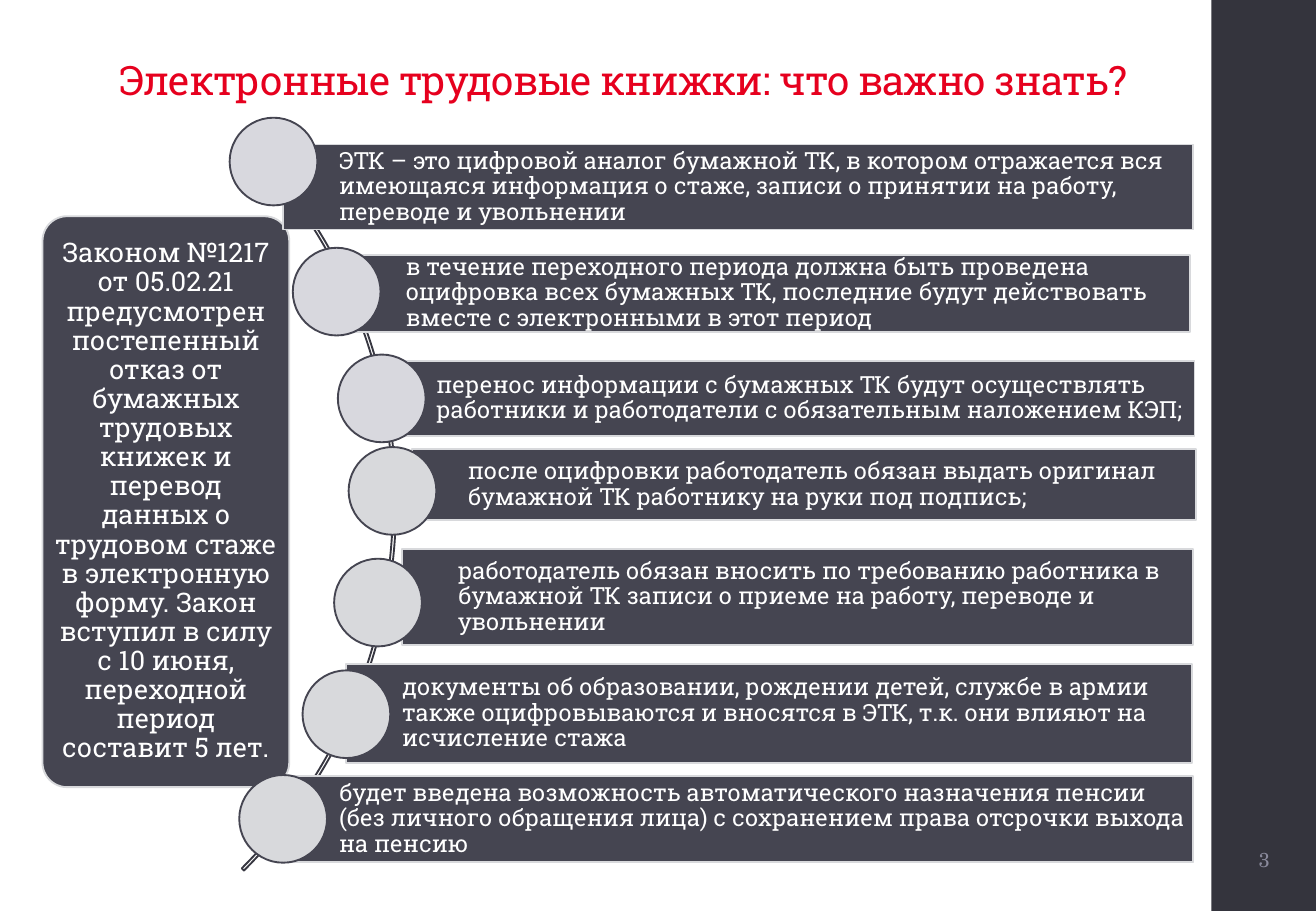
from typing import NamedTuple

from pptx import Presentation
from pptx.dml.color import RGBColor
from pptx.enum.shapes import MSO_SHAPE as Shape
from pptx.enum.text import MSO_ANCHOR as Anchor, PP_ALIGN as Align
from pptx.util import Pt

SLAB = "Roboto Slab"
DARK = "454551"
OUTLINE = "D8D9DC"
LILAC = "D8D8DE"
DOT_SIZE = 52


class Fact(NamedTuple):
    """One bar of the list, with the place and colour of its dot, in points."""
    bar: tuple
    dot: tuple
    dot_color: str
    text: str


FACTS = [
    Fact((167.8, 85.7, 539.3, 50.4), (136.1, 69.8), LILAC,
         "ЭТК – это цифровой аналог бумажной ТК, в котором отражается вся "
         "имеющаяся информация о стаже, записи о принятии на работу, "
         "переводе и увольнении"),
    Fact((207.4, 151.2, 497.5, 45.4), (173.5, 146.9), LILAC,
         "в течение переходного периода должна быть проведена оцифровка всех "
         "бумажных ТК, последние будут действовать вместе с электронными в "
         "этот период"),
    Fact((225.4, 213.8, 482.4, 44.6), (200.2, 210.2), LILAC,
         "перенос информации с бумажных ТК будут осуществлять работники и "
         "работодатели с обязательным наложением КЭП;"),
    Fact((244.1, 266.4, 464.4, 41.8), (206.6, 265), OUTLINE,
         "после оцифровки работодатель обязан выдать оригинал бумажной ТК "
         "работнику на руки под подпись;"),
    Fact((238.3, 325.4, 468.7, 56.9), (198, 331.2), OUTLINE,
         "работодатель обязан вносить по требованию работника в бумажной ТК "
         "записи о приеме на работу, переводе и увольнении"),
    Fact((205.2, 393.8, 501.1, 58.3), (179.3, 397.4), OUTLINE,
         "документы об образовании, рождении детей, службе в армии также "
         "оцифровываются и вносятся в ЭТК, т.к. они влияют на исчисление "
         "стажа"),
    Fact((167.8, 460.1, 539.3, 51.1), (141.8, 459.4), OUTLINE,
         "будет введена возможность автоматического назначения пенсии (без "
         "личного обращения лица) с сохранением права отсрочки выхода на "
         "пенсию"),
]

LAW = ("Законом №1217 от 05.02.21 предусмотрен постепенный отказ от бумажных "
       "трудовых книжек и перевод данных о трудовом стаже в электронную "
       "форму. Закон вступил в силу с 10 июня, переходной период составит "
       "5 лет.")


def rgb(color):
    return RGBColor.from_string(color)


def add_figure(slide, kind, box, fill=None, line=None):
    figure = slide.shapes.add_shape(kind, *map(Pt, box))
    figure.shadow.inherit = False
    if fill:
        figure.fill.solid()
        figure.fill.fore_color.rgb = rgb(fill)
    else:
        figure.fill.background()
    if line:
        figure.line.color.rgb = rgb(line)
        figure.line.width = Pt(1.1)
    else:
        figure.line.fill.background()
    return figure


def write(shape, text, size, color="FFFFFF", font=SLAB, align=Align.LEFT,
          anchor=Anchor.MIDDLE, insets=(2, 3.6, 2, 3.6), spacing=0.9):
    """Fill a shape with one paragraph; insets are left, top, right, bottom."""
    frame = shape.text_frame
    frame.word_wrap = True
    frame.vertical_anchor = anchor
    (frame.margin_left, frame.margin_top,
     frame.margin_right, frame.margin_bottom) = map(Pt, insets)
    frame.text = text
    paragraph = frame.paragraphs[0]
    paragraph.alignment = align
    paragraph.line_spacing = spacing
    run = paragraph.runs[0]
    run.font.name = font
    run.font.size = Pt(size)
    run.font.color.rgb = rgb(color)
    return run


def set_title(slide, text):
    title = slide.shapes.title
    title.left, title.top, title.width, title.height = map(
        Pt, (50.4, 7.9, 637.9, 56.9))
    run = write(title, text, 24, "E6001E", align=Align.CENTER,
                anchor=Anchor.BOTTOM, insets=(7.2, 3.6, 7.2, 3.6),
                spacing=Pt(23))
    run.font._element.set("spc", "-50")


def add_sidebar(slide, number):
    add_figure(slide, Shape.RECTANGLE, (717.8, 0, 62, 540), "34343D")
    page = slide.shapes.add_textbox(*map(Pt, (720, 486, 58.3, 46.8)))
    write(page, number, 12, "8A8A9C", "TeX Gyre Schola", Align.CENTER,
          spacing=1.0)


def add_law_panel(slide, text):
    panel = add_figure(slide, Shape.ROUNDED_RECTANGLE,
                       (25.2, 128.2, 146.2, 338.4), DARK, OUTLINE)
    panel.adjustments[0] = 0.1
    write(panel, text, 16, align=Align.CENTER, insets=(2.2, 1.4, 2.2, 1.4))


def add_arc(slide):
    arc = add_figure(slide, Shape.BLOCK_ARC, (-380.9, -9.4, 615.6, 615.6),
                     line="373741")
    for index, value in enumerate((189, 27, 0.003)):
        arc.adjustments[index] = value


def add_fact(slide, fact):
    bar = add_figure(slide, Shape.RECTANGLE, fact.bar, DARK, OUTLINE)
    write(bar, fact.text, 14, insets=(33.1, 2.9, 2.9, 2.9))
    add_figure(slide, Shape.OVAL, (*fact.dot, DOT_SIZE, DOT_SIZE),
               fact.dot_color, DARK)


def main():
    deck = Presentation()
    deck.slide_width, deck.slide_height = Pt(779.76), Pt(540)
    slide = deck.slides.add_slide(deck.slide_layouts[5])
    add_sidebar(slide, "3")
    set_title(slide, "Электронные трудовые книжки: что важно знать?")
    add_law_panel(slide, LAW)
    add_arc(slide)
    for fact in FACTS:
        add_fact(slide, fact)
    deck.save("out.pptx")


if __name__ == "__main__":
    main()
